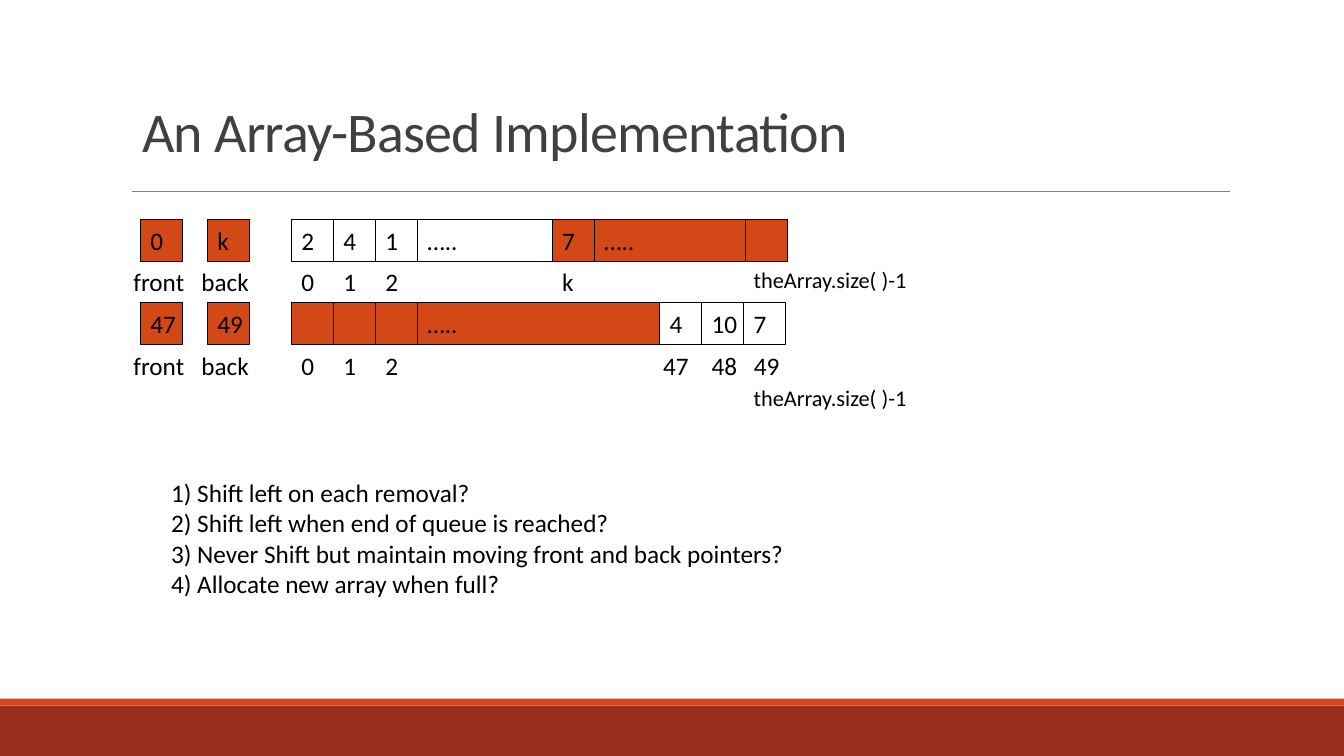
from lxml import etree
from pptx import Presentation
from pptx.dml.color import RGBColor
from pptx.enum.shapes import MSO_CONNECTOR, MSO_SHAPE
from pptx.enum.text import MSO_ANCHOR, MSO_AUTO_SIZE, PP_ALIGN
from pptx.oxml.ns import qn
from pptx.util import Pt

RECTANGLE = MSO_SHAPE.RECTANGLE
STRAIGHT = MSO_CONNECTOR.STRAIGHT
MIDDLE, BOTTOM = MSO_ANCHOR.MIDDLE, MSO_ANCHOR.BOTTOM
GROW = MSO_AUTO_SIZE.SHAPE_TO_FIT_TEXT
LEFT = PP_ALIGN.LEFT

FONT = "Calibri"
ORANGE, RED, WHITE, BLACK = "D34817", "9B2D1F", "FFFFFF", "000000"
TITLE_GRAY, RULE_GRAY = "404040", "808080"
CELL = 30
FRONT_LEFT, BACK_LEFT, ARRAY_LEFT = 100.4, 148.2, 208.2
LABEL_HEIGHT = 29
SIZE_LABEL = "theArray.size( )-1"
QUESTIONS = [
    "1) Shift left on each removal?",
    "2) Shift left when end of queue is reached?",
    "3) Never Shift but maintain moving front and back pointers?",
    "4) Allocate new array when full?",
]


def color(value):
    """Turn a hex string into a colour."""
    return RGBColor.from_string(value)


def write(para, text, size=18, text_color=BLACK):
    """Add one formatted run to a paragraph and return it."""
    para.alignment = LEFT
    span = para.add_run()
    span.text = text
    span.font.name = FONT
    span.font.size = Pt(size)
    span.font.color.rgb = color(text_color)
    return span


def add_rectangle(page, left, top, width, height, fill=None, outline=None):
    """Draw a flat rectangle with an optional fill and outline."""
    box = page.shapes.add_shape(RECTANGLE, Pt(left), Pt(top), Pt(width), Pt(height))
    box.shadow.inherit = False
    if fill:
        box.fill.solid()
        box.fill.fore_color.rgb = color(fill)
    else:
        box.fill.background()
    if outline:
        box.line.color.rgb = color(outline)
        box.line.width = Pt(0.75)
    else:
        box.line.fill.background()
    return box


def add_cell(page, left, top, width, fill, text):
    """Draw one outlined array cell with its value."""
    box = add_rectangle(page, left, top, width, CELL, fill, BLACK)
    box.text_frame.word_wrap = False
    box.text_frame.vertical_anchor = MIDDLE
    if text:
        write(box.text_frame.paragraphs[0], text)


def add_array(page, top, cells):
    """Lay cells given as width, fill and text side by side."""
    left = ARRAY_LEFT
    for width, fill, text in cells:
        add_cell(page, left, top, width, fill, text)
        left += width


def add_label(page, left, top, width, text, size=18):
    """Add a one-line caption."""
    box = page.shapes.add_textbox(Pt(left), Pt(top), Pt(width), Pt(LABEL_HEIGHT))
    box.text_frame.word_wrap = False
    box.text_frame.auto_size = GROW
    write(box.text_frame.paragraphs[0], text, size)


def add_queue(page, top, front, back, cells, indexes, size_top):
    """Draw a queue state: pointers, array and captions."""
    label_top = top + CELL
    add_cell(page, FRONT_LEFT, top, CELL, ORANGE, front)
    add_cell(page, BACK_LEFT, top, CELL, ORANGE, back)
    add_array(page, top, cells)
    add_label(page, 88.2, label_top, 54, "front")
    add_label(page, 136.8, label_top, 54, "back")
    for position in range(3):
        add_label(page, ARRAY_LEFT + position * CELL, label_top, 24, str(position))
    for left, width, text in indexes:
        add_label(page, left, label_top, width, text)
    add_label(page, 531.2, size_top, 130, SIZE_LABEL, 16)


def add_title(page, text):
    """Add the slide title above the rule."""
    box = page.shapes.add_textbox(Pt(94.6), Pt(51), Pt(720), Pt(70))
    frame = box.text_frame
    frame.word_wrap = True
    frame.vertical_anchor = BOTTOM
    para = frame.paragraphs[0]
    para.line_spacing = 0.85
    span = write(para, text, 40, TITLE_GRAY)
    span.font._element.set("spc", "-50")


def add_rule(page, left, right, top):
    """Draw the thin line under the title."""
    rule = page.shapes.add_connector(STRAIGHT, Pt(left), Pt(top), Pt(right), Pt(top))
    rule.line.color.rgb = color(RULE_GRAY)
    rule.line.width = Pt(0.5)
    etree.SubElement(rule._element.spPr, qn("a:effectLst"))


def add_questions(page, questions):
    """List the design questions, one paragraph each."""
    box = page.shapes.add_textbox(Pt(115.2), Pt(337.5), Pt(474), Pt(94.5))
    frame = box.text_frame
    frame.word_wrap = True
    frame.auto_size = GROW
    for number, question in enumerate(questions):
        para = frame.add_paragraph() if number else frame.paragraphs[0]
        write(para, question)


def main():
    """Build the slide and save it."""
    deck = Presentation()
    deck.slide_width, deck.slide_height = Pt(960), Pt(540)
    page = deck.slides.add_slide(deck.slide_layouts[6])
    add_rectangle(page, 0, 504, 960, 36, RED)
    add_rectangle(page, 0, 499, 960, 5, ORANGE)
    add_rule(page, 94.3, 878.8, 136.6)
    add_title(page, "An Array-Based Implementation")

    filled_front = [(CELL, WHITE, value) for value in "241"] + [
        (96.3, WHITE, "….."),
        (CELL, ORANGE, "7"),
        (108, ORANGE, "….."),
        (CELL, ORANGE, ""),
    ]
    filled_back = [(CELL, ORANGE, "")] * 3 + [(173, ORANGE, "…..")] + [
        (CELL, None, value) for value in ("4", "10", "7")
    ]
    end_indexes = [(466.6, 34, "47"), (501.3, 34, "48"), (531.4, 34, "49")]
    add_queue(page, 156.6, "0", "k", filled_front, [(394.4, 24, "k")], 186.4)
    add_queue(page, 216.4, "47", "49", filled_back, end_indexes, 270.6)
    add_questions(page, QUESTIONS)
    deck.save("out.pptx")


if __name__ == "__main__":
    main()
